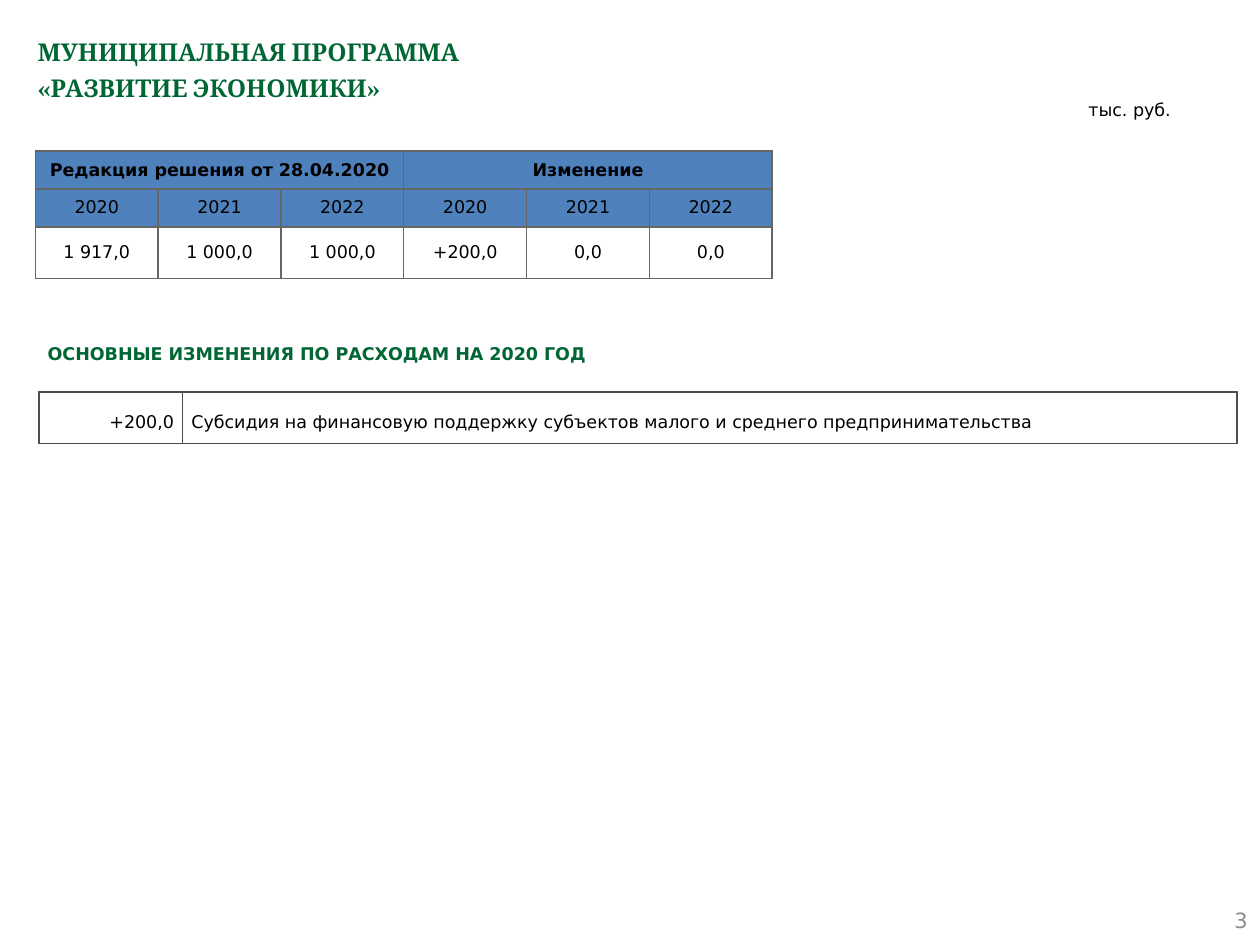
from dataclasses import dataclass

from lxml.etree import SubElement
from pptx import Presentation
from pptx.dml.color import RGBColor
from pptx.enum.shapes import MSO_SHAPE
from pptx.enum.text import MSO_ANCHOR, PP_ALIGN
from pptx.oxml.ns import qn
from pptx.util import Inches, Pt


@dataclass(frozen=True)
class Theme:
    green: str = "006633"
    black: str = "000000"
    gray: str = "8C8C8C"
    blue: str = "4F81BD"
    grid: str = "666666"
    rule: str = "4D4D4D"
    serif: str = "Cambria"
    sans: str = "DejaVu Sans"
    head: int = 14
    page: int = 12
    body: int = 10


THEME = Theme()


@dataclass(frozen=True)
class Style:
    color: str = THEME.black
    size: int = THEME.body
    font: str = THEME.sans
    bold: bool = False
    align: PP_ALIGN = PP_ALIGN.LEFT
    space: float = 1.0
    after: int = 0


@dataclass(frozen=True)
class Label:
    text: str
    box: tuple[float, float, float, float]
    style: Style
    anchor: MSO_ANCHOR = MSO_ANCHOR.TOP


@dataclass(frozen=True)
class Grid:
    left: float
    top: float
    cols: list[float]
    rows: list[float]
    line: str
    inset: tuple[float, float]


LABELS = [
    Label("МУНИЦИПАЛЬНАЯ ПРОГРАММА\n«РАЗВИТИЕ ЭКОНОМИКИ»", (0.2, 0.2, 9.61, 0.79),
          Style(THEME.green, THEME.head, THEME.serif, True, space=1.2)),
    Label("тыс. руб.", (8.54, 0.7, 1.01, 0.3), Style(space=1.2)),
    Label("3", (7.67, 7.1, 2.33, 0.4),
          Style(THEME.gray, THEME.page, align=PP_ALIGN.RIGHT), MSO_ANCHOR.MIDDLE),
]
BANNER = Label("ОСНОВНЫЕ ИЗМЕНЕНИЯ ПО РАСХОДАМ НА 2020 ГОД", (0.28, 2.59, 5.32, 0.43),
               Style(THEME.green, bold=True), MSO_ANCHOR.MIDDLE)

GROUPS = ["Редакция решения от 28.04.2020", "Изменение"]
YEARS = ["2020", "2021", "2022"]
SUMS = ["1 917,0", "1 000,0", "1 000,0", "+200,0", "0,0", "0,0"]
CHANGE = ["+200,0", "Субсидия на финансовую поддержку субъектов малого "
                    "и среднего предпринимательства"]

BUDGET = Grid(0.28, 1.2, [0.975] * len(SUMS), [0.3, 0.3, 0.41], THEME.grid, (0.05, 0.05))
DETAIL = Grid(0.31, 3.11, [1.14, 8.37], [0.41], THEME.rule, (0.07, 0))


def write(frame, text: str, style: Style) -> None:
    para = frame.paragraphs[0]
    para.text = text
    para.alignment = style.align
    para.line_spacing = style.space
    para.space_before = Pt(0)
    para.space_after = Pt(style.after)
    for run in para.runs:
        font = run.font
        font.name, font.size, font.bold = style.font, Pt(style.size), style.bold
        font.color.rgb = RGBColor.from_string(style.color)
    for mark in para._p.findall(qn("a:br")):
        SubElement(mark, qn("a:rPr"), sz=str(style.size * 100))


def fill_frame(shape, label: Label) -> None:
    frame = shape.text_frame
    frame.word_wrap = True
    frame.vertical_anchor = label.anchor
    write(frame, label.text, label.style)


def add_label(slide, label: Label) -> None:
    fill_frame(slide.shapes.add_textbox(*map(Inches, label.box)), label)


def add_banner(slide, label: Label) -> None:
    shape = slide.shapes.add_shape(MSO_SHAPE.PENTAGON, *map(Inches, label.box))
    shape.adjustments[0] = 0
    shape.shadow.inherit = False
    shape.fill.background()
    shape.line.fill.background()
    fill_frame(shape, label)


def set_border(cell, color: str) -> None:
    props = cell._tc.get_or_add_tcPr()
    for spot, side in enumerate(("lnL", "lnR", "lnT", "lnB")):
        line = SubElement(props, qn(f"a:{side}"), w=str(Pt(1)))
        solid = SubElement(line, qn("a:solidFill"))
        SubElement(solid, qn("a:srgbClr"), val=color)
        props.insert(spot, line)


def add_grid(slide, grid: Grid):
    """Add a plain bordered table and return it for filling."""
    table = slide.shapes.add_table(
        len(grid.rows), len(grid.cols), Inches(grid.left), Inches(grid.top),
        Inches(sum(grid.cols)), Inches(sum(grid.rows))).table
    table.first_row = table.horz_banding = False
    for col, width in zip(table.columns, grid.cols):
        col.width = Inches(width)
    for row, height in zip(table.rows, grid.rows):
        row.height = Inches(height)
    side, edge = map(Inches, grid.inset)
    for cell in table.iter_cells():
        cell.margin_left = cell.margin_right = side
        cell.margin_top = cell.margin_bottom = edge
        cell.vertical_anchor = MSO_ANCHOR.MIDDLE
        cell.fill.background()
        set_border(cell, grid.line)
    return table


def add_budget(slide) -> None:
    table = add_grid(slide, BUDGET)
    plain = Style(align=PP_ALIGN.CENTER)
    strong = Style(bold=True, align=PP_ALIGN.CENTER)
    span = len(YEARS)
    for col, total in enumerate(SUMS):
        for row in range(2):
            fill = table.cell(row, col).fill
            fill.solid()
            fill.fore_color.rgb = RGBColor.from_string(THEME.blue)
        write(table.cell(1, col).text_frame, YEARS[col % span], plain)
        write(table.cell(2, col).text_frame, total, plain)
    for index, name in enumerate(GROUPS):
        first = table.cell(0, index * span)
        first.merge(table.cell(0, index * span + span - 1))
        write(first.text_frame, name, strong)


def add_detail(slide) -> None:
    table = add_grid(slide, DETAIL)
    for col, align in enumerate((PP_ALIGN.RIGHT, PP_ALIGN.LEFT)):
        style = Style(align=align, space=1.5, after=10)
        write(table.cell(0, col).text_frame, CHANGE[col], style)


def main() -> None:
    deck = Presentation()
    deck.slide_width, deck.slide_height = Inches(10), Inches(7.5)
    slide = deck.slides.add_slide(deck.slide_layouts[6])
    for label in LABELS:
        add_label(slide, label)
    add_banner(slide, BANNER)
    add_detail(slide)
    add_budget(slide)
    deck.save("out.pptx")


if __name__ == "__main__":
    main()
